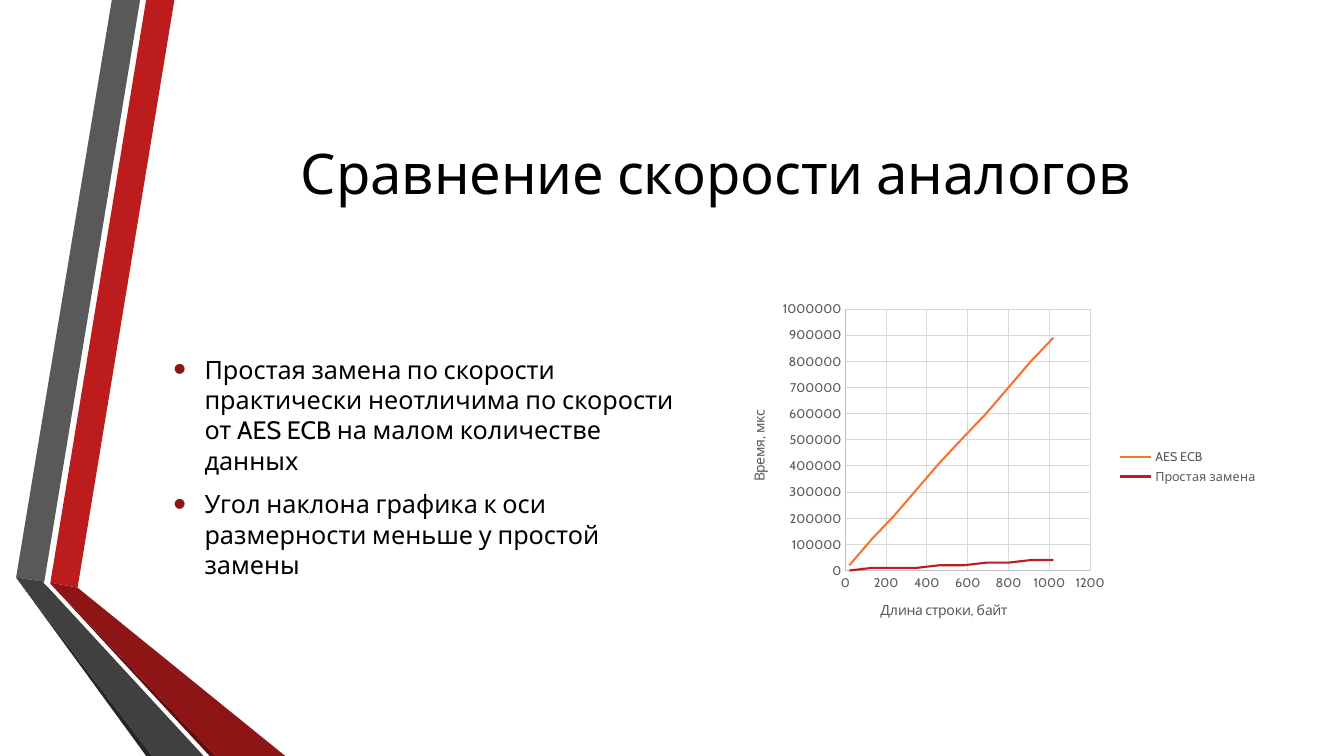
import pptx
import pptx.chart.data
import pptx.dml.color
import pptx.enum.chart
import pptx.enum.text
import pptx.oxml
import pptx.oxml.ns
import pptx.util
from pptx.util import Inches


def color(value):
    return pptx.dml.color.RGBColor.from_string(value)


def style_font(font, size, value):
    settings = {"name": "Cabin", "size": pptx.util.Pt(size), "bold": False}
    for name, setting in settings.items():
        setattr(font, name, setting)
    font.color.rgb = color(value)


deck = pptx.Presentation()
deck.slide_width, deck.slide_height = Inches(13.33), Inches(7.5)
page = deck.slides.add_slide(deck.slide_layouts[6])

# Folded ribbons on the left
ribbons = [
    ("BC1C1C", [(0.5, 5.78), (0.77, 5.83), (1.73, 0), (1.45, 0)]),
    ("595959", [(1.39, 0), (1.11, 0), (0.16, 5.73), (0.44, 5.77)]),
    ("262626", [(0.16, 5.73), (1.45, 7.5), (1.51, 7.5)]),
    ("5E0E0E", [(0.5, 5.79), (2.08, 7.5), (2.14, 7.5)]),
    ("8D1515", [(0.5, 5.79), (2.14, 7.5), (2.83, 7.5), (0.77, 5.83), (0.5, 5.78)]),
    ("404040", [(2.02, 7.5), (0.48, 5.83), (0.43, 5.78), (0.44, 5.77),
                (0.16, 5.73), (1.51, 7.5)]),
]
for fill, points in ribbons:
    corners = [(Inches(x), Inches(y)) for x, y in points]
    builder = page.shapes.build_freeform(*corners[0])
    builder.add_line_segments(corners[1:], close=True)
    ribbon = builder.convert_to_shape()
    ribbon.shadow.inherit = False
    ribbon.fill.solid()
    ribbon.fill.fore_color.rgb = color(fill)
    ribbon.line.fill.background()

# Title and bullet text
title = ["Сравнение скорости аналогов"]
findings = [
    "Простая замена по скорости практически неотличима по скорости "
    "от AES ECB на малом количестве данных",
    "Угол наклона графика к оси размерности меньше у простой замены",
]
bullet_parts = [
    '<a:buClr {}><a:srgbClr val="8D1515"/></a:buClr>',
    '<a:buSzPct {} val="145000"/>',
    '<a:buFont {} typeface="Arial"/>',
    '<a:buChar {} char="•"/>',
]
namespace = pptx.oxml.ns.nsdecls("a")
text_blocks = [
    ((1.62, 0.75, 10.96, 1.92), title, 40, False),
    ((1.62, 2.92, 5.35, 3.42), findings, 18, True),
]
for place, lines, size, bulleted in text_blocks:
    box = page.shapes.add_textbox(*map(Inches, place))
    frame = box.text_frame
    frame.word_wrap = True
    frame.vertical_anchor = pptx.enum.text.MSO_ANCHOR.MIDDLE
    for index, line in enumerate(lines):
        para = frame.add_paragraph() if index else frame.paragraphs[0]
        span = para.add_run()
        span.text = line
        style_font(span.font, size, "000000")
        if not bulleted:
            para.alignment = pptx.enum.text.PP_ALIGN.CENTER
            continue
        para.space_before = pptx.util.Pt(3.6)
        para.space_after = pptx.util.Pt(6)
        properties = para._p.get_or_add_pPr()
        properties.set("marL", str(Inches(0.31)))
        properties.set("indent", str(Inches(-0.31)))
        for part in bullet_parts:
            properties.append(pptx.oxml.parse_xml(part.format(namespace)))

# Speed chart
lengths = [20, 130, 240, 350, 460, 580, 690, 800, 910, 1020]
timings = {
    "AES ECB": ("F67534", [20000, 120000, 210000, 310000, 410000,
                           510000, 600000, 700000, 800000, 890000]),
    "Простая замена": ("BC1C1C", [0, 10000, 10000, 10000, 20000,
                                  20000, 30000, 30000, 40000, 40000]),
}
data = pptx.chart.data.XyChartData()
for name, (_, times) in timings.items():
    series = data.add_series(name)
    for length, time in zip(lengths, times):
        series.add_data_point(length, time)
chart = page.shapes.add_chart(
    pptx.enum.chart.XL_CHART_TYPE.XY_SCATTER_SMOOTH_NO_MARKERS,
    *map(Inches, (7.23, 2.92, 5.35, 3.42)), data).chart
style_font(chart.font, 10, "000000")
chart.has_title = False
chart.plots[0].vary_by_categories = False
for series, (stroke, _) in zip(chart.plots[0].series, timings.values()):
    series.smooth = True
    series.marker.style = pptx.enum.chart.XL_MARKER_STYLE.NONE
    series.format.line.color.rgb = color(stroke)
    series.format.line.width = pptx.util.Pt(1.5)

# Axes and legend
axes = [
    (chart.category_axis, "Длина строки, байт", 1200, 200),
    (chart.value_axis, "Время, мкс", 1000000, 100000),
]
for axis, caption, top, step in axes:
    settings = {
        "minimum_scale": 0, "maximum_scale": top, "major_unit": step,
        "has_major_gridlines": True,
        "major_tick_mark": pptx.enum.chart.XL_TICK_MARK.NONE,
        "minor_tick_mark": pptx.enum.chart.XL_TICK_MARK.NONE,
    }
    for name, setting in settings.items():
        setattr(axis, name, setting)
    style_font(axis.tick_labels.font, 9, "595959")
    axis.tick_labels.number_format = "General"
    axis.tick_labels.number_format_is_linked = False
    for line, stroke in ((axis.format.line, "BFBFBF"),
                         (axis.major_gridlines.format.line, "D9D9D9")):
        line.color.rgb = color(stroke)
        line.width = pptx.util.Pt(0.75)
    span = axis.axis_title.text_frame.paragraphs[0].add_run()
    span.text = caption
    style_font(span.font, 10, "595959")
chart.has_legend = True
chart.legend.position = pptx.enum.chart.XL_LEGEND_POSITION.RIGHT
chart.legend.include_in_layout = False
style_font(chart.legend.font, 9, "595959")

deck.save("out.pptx")
